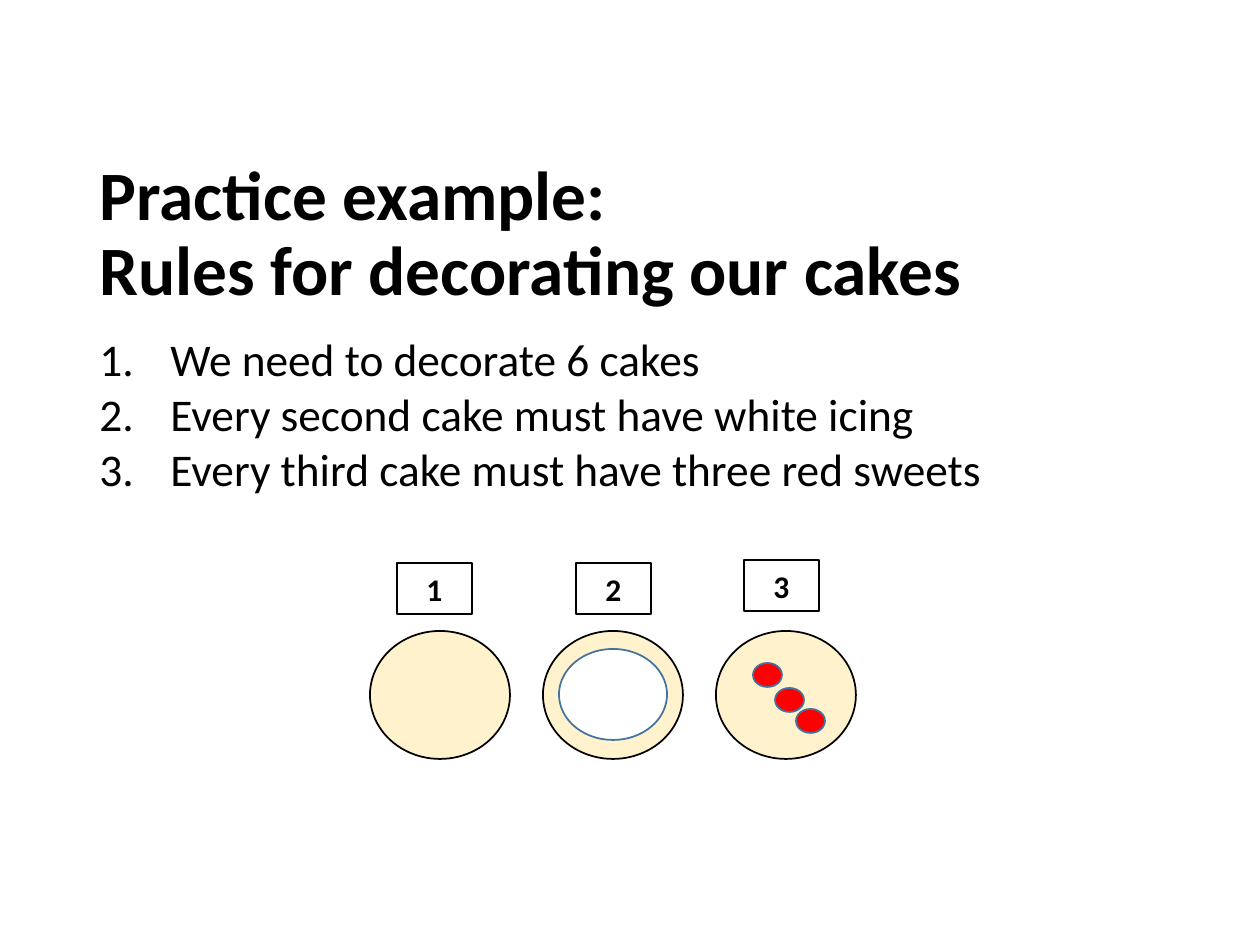
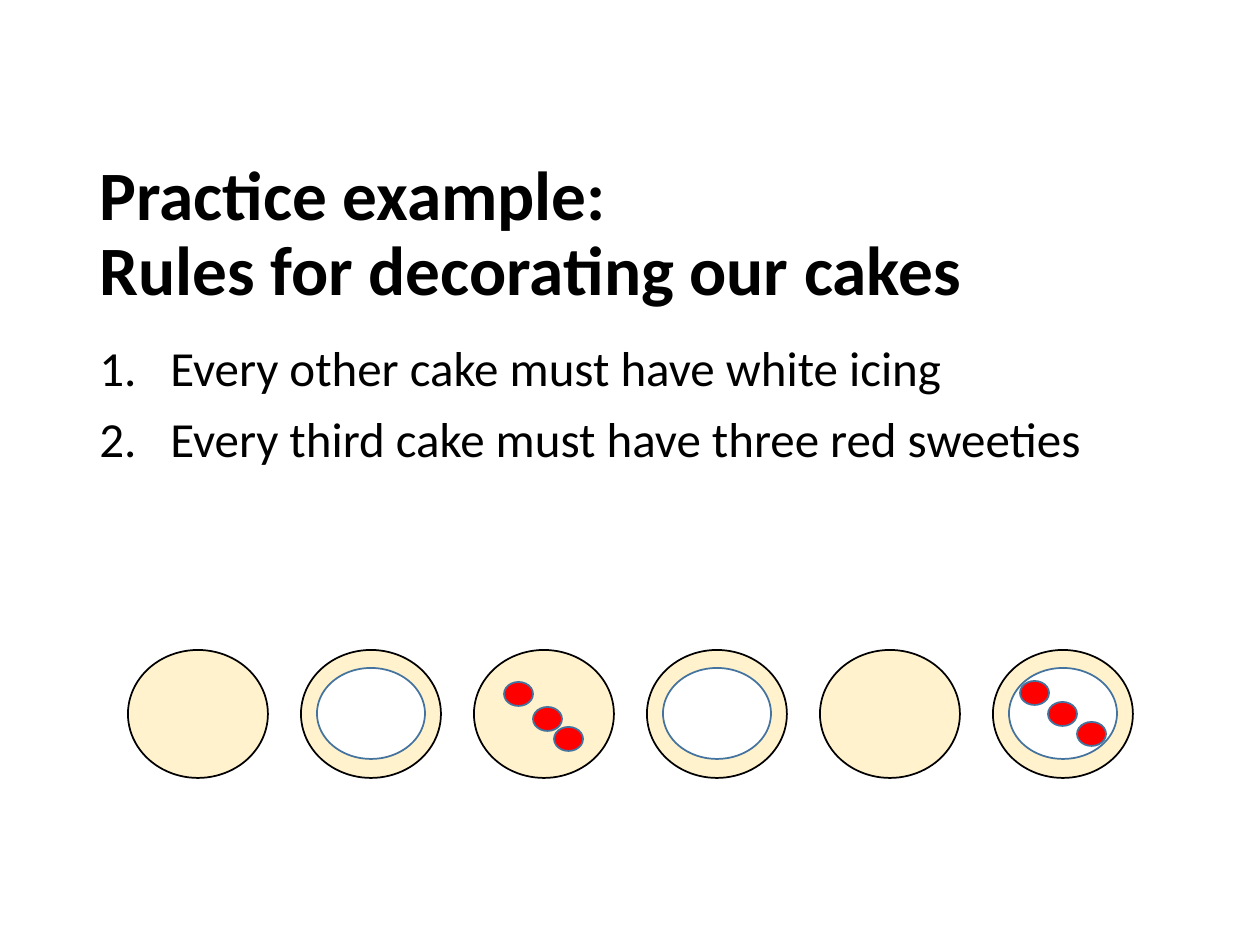
import pptx
import pptx.util
import pptx.dml.color
import pptx.enum.shapes
import pptx.enum.text
import pptx.oxml.ns
import lxml.etree

EMU_PER_PX = 914400 // 126
BLACK, WHITE = "000000", "FFFFFF"
SPONGE, RED, BLUE = "FFF2CC", "FF0000", "43739E"
CAKE_W, CAKE_H, CAKE_PITCH = 140, 128, 173
ICING_W, ICING_H = 108, 91
SWEET_W, SWEET_H = 29, 24
LIST_INDENT = 71
TITLE = ["Practice example:", "Rules for decorating our cakes"]
TITLE_FORMAT = {"size": pptx.util.Pt(39.6), "bold": True}
LABEL_FORMAT = {"size": pptx.util.Pt(18), "bold": True}


def px(n):
    return pptx.util.Emu(n * EMU_PER_PX)


def color(value):
    return pptx.dml.color.RGBColor.from_string(value)


def write(p, text, font_format):
    r = p.add_run()
    r.text = text
    r.font.color.rgb = color(BLACK)
    for name, value in {"name": "Calibri", **font_format}.items():
        setattr(r.font, name, value)


def number(p):
    pPr = p._p.get_or_add_pPr()
    pPr.set("marL", str(px(LIST_INDENT)))
    pPr.set("indent", str(-px(LIST_INDENT)))
    tag = pptx.oxml.ns.qn("a:buAutoNum")
    lxml.etree.SubElement(pPr, tag, type="arabicPeriod")


def add_text(s, box, lines, font_format, spacing, gap=0, numbered=False,
             anchor=pptx.enum.text.MSO_ANCHOR.TOP):
    tf = s.shapes.add_textbox(*map(px, box)).text_frame
    tf.word_wrap = True
    tf.vertical_anchor = anchor
    for i, line in enumerate(lines):
        p = tf.add_paragraph() if i else tf.paragraphs[0]
        if numbered:
            number(p)
        p.line_spacing = spacing
        p.space_before = pptx.util.Pt(gap if i else 0)
        write(p, line, font_format)


def add_title(s):
    add_text(s, (87, 160, 1086, 152), TITLE, TITLE_FORMAT, 0.9,
             anchor=pptx.enum.text.MSO_ANCHOR.MIDDLE)


def add_rules(s, rules, size, spacing, gap):
    add_text(s, (87, 338, 1086, 169), rules, {"size": pptx.util.Pt(size)},
             spacing, gap, numbered=True)


def add_preset(s, kind, box, fill, line, width):
    sp = s.shapes.add_shape(kind, *map(px, box))
    sp.shadow.inherit = False
    if fill:
        sp.fill.solid()
        sp.fill.fore_color.rgb = color(fill)
    else:
        sp.fill.background()
    sp.line.color.rgb = color(line)
    sp.line.width = pptx.util.Pt(width)
    return sp


def add_oval(s, box, fill, line):
    add_preset(s, pptx.enum.shapes.MSO_SHAPE.OVAL, box, fill, line, 1)


def add_cake(s, x, y, iced, sweets):
    add_oval(s, (x, y, CAKE_W, CAKE_H), SPONGE, BLACK)
    if iced:
        add_oval(s, (x + (CAKE_W - ICING_W) // 2, y + (CAKE_H - ICING_H) // 2,
                     ICING_W, ICING_H), WHITE, BLUE)
    for dx, dy in sweets:
        add_oval(s, (x + dx, y + dy, SWEET_W, SWEET_H), RED, BLUE)


def add_cakes(s, x, y, count, sweets_by_cake):
    for n in range(1, count + 1):
        add_cake(s, x + (n - 1) * CAKE_PITCH, y, n % 2 == 0,
                 sweets_by_cake.get(n, []))


def add_label(s, x, y, text):
    sp = add_preset(s, pptx.enum.shapes.MSO_SHAPE.RECTANGLE,
                    (x, y, 75, 51), None, BLACK, 0.75)
    p = sp.text_frame.paragraphs[0]
    p.alignment = pptx.enum.text.PP_ALIGN.CENTER
    write(p, text, LABEL_FORMAT)


def add_slide(prs):
    s = prs.slides.add_slide(prs.slide_layouts[6])
    add_title(s)
    return s


def main():
    prs = pptx.Presentation()
    prs.slide_width = pptx.util.Inches(10)
    prs.slide_height = pptx.util.Inches(7.5)

    s = add_slide(prs)
    add_rules(s, ["We need to decorate 6 cakes",
                  "Every second cake must have white icing",
                  "Every third cake must have three red sweets"], 25.9, 0.75, 8)
    add_cakes(s, 370, 631, 3, {3: [(37, 32), (59, 57), (80, 78)]})
    for i, (x, y) in enumerate([(397, 563), (576, 563), (744, 560)], 1):
        add_label(s, x, y, str(i))

    s = add_slide(prs)
    add_rules(s, ["Every other cake must have white icing",
                  "Every third cake must have three red sweeties"], 28, 0.9, 10)
    add_cakes(s, 128, 650, 6, {3: [(30, 32), (59, 57), (80, 77)],
                               6: [(27, 31), (55, 52), (84, 72)]})

    prs.save("out.pptx")


if __name__ == "__main__":
    main()
